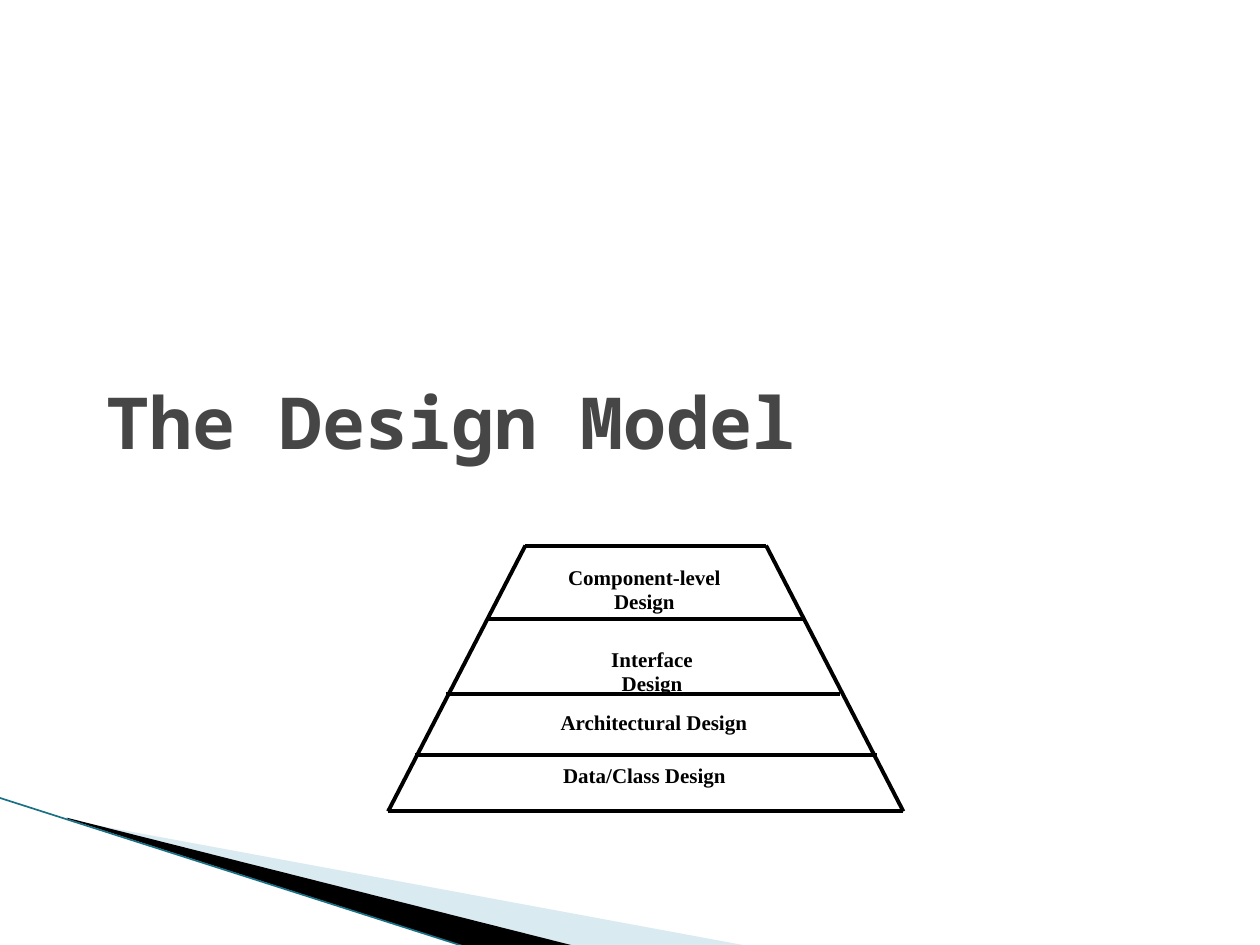
from lxml import etree
from pptx import Presentation
from pptx.dml.color import RGBColor
from pptx.enum.shapes import MSO_CONNECTOR, MSO_SHAPE
from pptx.enum.text import MSO_ANCHOR, PP_ALIGN
from pptx.oxml.ns import qn
from pptx.util import Inches, Pt

STRAIGHT = MSO_CONNECTOR.STRAIGHT
ROUNDED = MSO_SHAPE.ROUNDED_RECTANGLE
TOP, MIDDLE = MSO_ANCHOR.TOP, MSO_ANCHOR.MIDDLE
LEFT, CENTER = PP_ALIGN.LEFT, PP_ALIGN.CENTER
BLACK = "000000"


def rgb(value):
    return RGBColor.from_string(value)


class Deck:
    title_font = {"name": "Noto Sans Mono", "size": Pt(41), "bold": True}
    label_font = {"name": "Times New Roman", "size": Pt(12), "bold": True}

    def __init__(self):
        self.prs = Presentation()
        self.prs.slide_width, self.prs.slide_height = Inches(10), Inches(7.5)
        self.s = self.prs.slides.add_slide(self.prs.slide_layouts[6])

    def set_text(self, sp, text, font, color, align, anchor, wrap, inset=0.1):
        tf = sp.text_frame
        frame = {"word_wrap": wrap, "vertical_anchor": anchor,
                 "margin_left": Inches(inset), "margin_right": Inches(inset),
                 "margin_top": Inches(0.05), "margin_bottom": Inches(0.05)}
        for key, value in frame.items():
            setattr(tf, key, value)
        p = tf.paragraphs[0]
        p.alignment, p.line_spacing = align, 0.95
        r = p.add_run()
        r.text = text
        for key, value in font.items():
            setattr(r.font, key, value)
        r.font.color.rgb = rgb(color)

    def title(self, text, box):
        sp = self.s.shapes.add_textbox(*map(Inches, box))
        self.set_text(sp, text, self.title_font, "464646", LEFT, MIDDLE, True)

    def label(self, text, box, two_lines):
        sp = self.s.shapes.add_shape(ROUNDED, *map(Inches, box))
        sp.adjustments[0] = 0
        sp.shadow.inherit = False
        sp.fill.background()
        sp.line.fill.background()
        anchor, inset = (MIDDLE, 0.25) if two_lines else (TOP, 0.1)
        self.set_text(sp, text, self.label_font, BLACK, CENTER, anchor, two_lines, inset)

    def line(self, start, end, color=BLACK, width=2.25):
        c = self.s.shapes.add_connector(STRAIGHT, *map(Inches, start + end))
        c.line.color.rgb = rgb(color)
        c.line.width = Pt(width)
        etree.SubElement(c._element.spPr, qn("a:effectLst"))

    def wedge(self, points, color, alpha=100):
        points = [(Inches(x), Inches(y)) for x, y in points]
        builder = self.s.shapes.build_freeform(*points[0])
        builder.add_line_segments(points[1:], close=True)
        sp = builder.convert_to_shape()
        sp.shadow.inherit = False
        sp.line.fill.background()
        sp.fill.solid()
        sp.fill.fore_color.rgb = rgb(color)
        if alpha < 100:
            clr = sp._element.spPr.find(".//" + qn("a:srgbClr"))
            etree.SubElement(clr, qn("a:alpha"), val=str(alpha * 1000))


def main():
    deck = Deck()
    deck.wedge([(0.55, 6.51), (5.95, 7.51), (4.56, 7.51), (0.55, 6.5)], "A0CBDC", 40)
    deck.wedge([(0.53, 6.49), (4.57, 7.51), (3.72, 7.52), (0.54, 6.5)], BLACK)
    deck.line((-0.01, 6.33), (3.71, 7.52), "1A7085", 0.95)
    deck.title("The Design Model", (0.75, 2.75, 8.5, 1.25))

    labels = [("Data/Class Design", 4.37, 6.02, 1.49, False),
              ("Architectural Design", 4.35, 5.6, 1.68, False),
              ("Interface Design", 4.49, 5.09, 1.37, True),
              ("Component-level Design", 4.15, 4.44, 1.93, True)]
    for text, x, y, width, two_lines in labels:
        deck.label(text, (x, y, width, 0.49), two_lines)

    levels = [(3.08, 7.17, 6.44), (3.29, 6.96, 5.99), (3.54, 6.67, 5.51),
              (3.88, 6.37, 4.91), (4.17, 6.08, 4.33)]
    for left, right, y in levels:
        deck.line((left, y), (right, y))
    base, peak = levels[0], levels[-1]
    for side in (0, 1):
        deck.line((peak[side], peak[2]), (base[side], base[2]))
    deck.prs.save("out.pptx")


if __name__ == "__main__":
    main()
